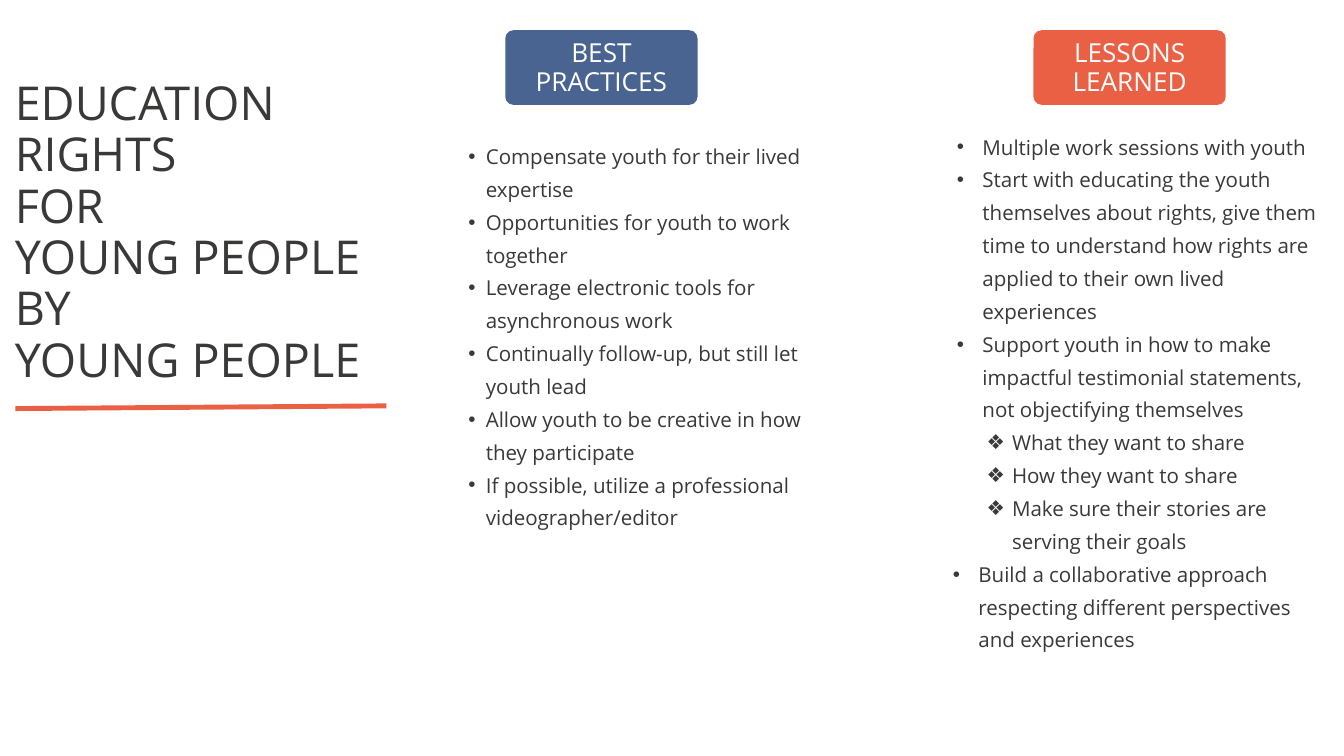
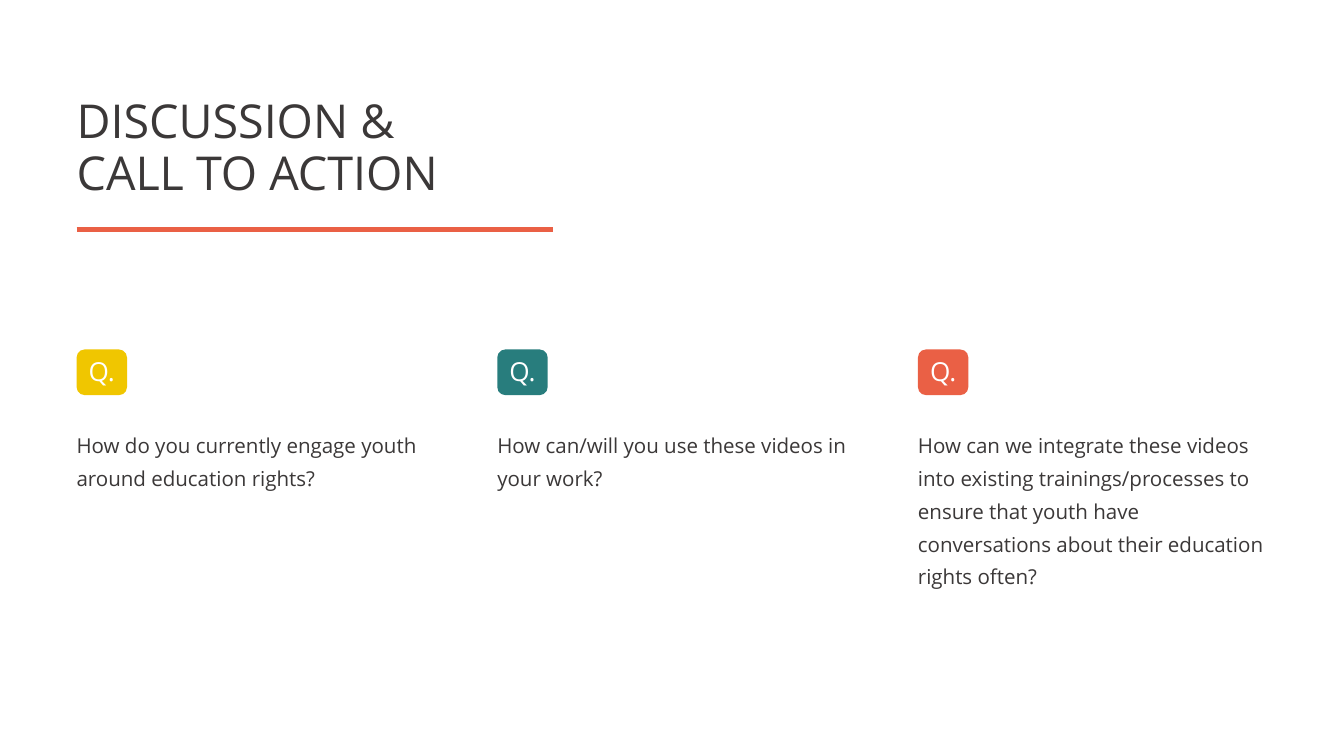
"""Build two slides on youth education rights: lessons and discussion."""
from lxml.etree import SubElement
from pptx import Presentation
from pptx.dml.color import RGBColor
from pptx.enum.shapes import MSO_CONNECTOR, MSO_SHAPE
from pptx.enum.text import MSO_ANCHOR, MSO_AUTO_SIZE, PP_ALIGN
from pptx.oxml.ns import qn
from pptx.util import Pt

PX = 9144
FONT = "Open Sans"
INK, WHITE = "3B3838", "FFFFFF"
BLUE, CORAL, GOLD, TEAL = "4A6491", "EA6045", "F0C600", "287D7D"
tint = RGBColor.from_string


def scale(*sizes):
    """Turn px lengths into EMU."""
    return [size * PX for size in sizes]


def write(shape, lines, size, lead, color=INK, align=PP_ALIGN.LEFT, anchor=MSO_ANCHOR.TOP):
    """Fill a shape with one paragraph per line."""
    frame = shape.text_frame
    frame.margin_left = frame.margin_top = frame.margin_right = frame.margin_bottom = 0
    frame.word_wrap = True
    frame.auto_size = MSO_AUTO_SIZE.NONE
    frame.vertical_anchor = anchor
    for i, line in enumerate(lines):
        para = frame.add_paragraph() if i else frame.paragraphs[0]
        para.alignment = align
        para.line_spacing = Pt(lead)
        run = para.add_run()
        run.text = line
        run.font.name = FONT
        run.font.size = Pt(size)
        run.font.color.rgb = tint(color)
    return frame.paragraphs


deck = Presentation()
deck.slide_width, deck.slide_height = scale(2000, 1125)

heads = [
    (["EDUCATION RIGHTS", "FOR", "YOUNG PEOPLE", "BY", "YOUNG PEOPLE"],
     (22, 117, 553, 459), (23, 608, 575, 604)),
    (["DISCUSSION &", "CALL TO ACTION"],
     (114, 144, 1282, 154), (114, 341, 823, 341)),
]
slides = []
for lines, box, ends in heads:
    slide = deck.slides.add_slide(deck.slide_layouts[5])
    slides.append(slide)
    title = slide.shapes.title
    title.left, title.top, title.width, title.height = scale(*box)
    write(title, lines, 50, 55)
    rule = slide.shapes.add_connector(MSO_CONNECTOR.STRAIGHT, *scale(*ends))
    rule.line.color.rgb = tint(CORAL)
    rule.line.width = Pt(5.25)
    SubElement(rule._element.spPr, qn("a:effectLst"))
lessons, talk = slides

DOT, GEM = ("•", 1), ("❖", 2)
lists = [
    ((671, 202, 571, 572), 26, [
        ("Compensate youth for their lived expertise", DOT, 52),
        ("Opportunities for youth to work together", DOT, 52),
        ("Leverage electronic tools for asynchronous work", DOT, 52),
        ("Continually follow-up, but still let youth lead", DOT, 52),
        ("Allow youth to be creative in how they participate", DOT, 52),
        ("If possible, utilize a professional videographer/editor", DOT, 52),
    ]),
    ((1399, 188, 571, 781), 38, [
        ("Multiple work sessions with youth", DOT, 63),
        ("Start with educating the youth themselves about rights, give them "
         "time to understand how rights are applied to their own lived experiences", DOT, 63),
        ("Support youth in how to make impactful testimonial statements, "
         "not objectifying themselves", DOT, 63),
        ("What they want to share", GEM, 107),
        ("How they want to share", GEM, 107),
        ("Make sure their stories are serving their goals", GEM, 107),
        ("Build a collaborative approach respecting different perspectives "
         "and experiences", DOT, 57),
    ]),
]
for box, hang, items in lists:
    body = lessons.shapes.add_textbox(*scale(*box))
    paras = write(body, [item[0] for item in items], 22, 35.2)
    for para, (text, (mark, level), left) in zip(paras, items):
        para.level = level
        props = para._p.get_or_add_pPr()
        props.set("marL", str(left * PX))
        props.set("indent", str(-hang * PX))
        SubElement(props, qn("a:buFont"), typeface="Arial")
        SubElement(props, qn("a:buChar"), char=mark)

badges = [
    (lessons, "BEST PRACTICES", BLUE, (752, 45, 286, 111)),
    (lessons, "LESSONS LEARNED", CORAL, (1538, 45, 286, 111)),
]
asks = [
    (GOLD, "How do you currently engage youth around education rights?", 93),
    (TEAL, "How can/will you use these videos in your work?", 93),
    (CORAL, "How can we integrate these videos into existing trainings/processes to "
            "ensure that youth have conversations about their education rights often?", 241),
]
for col, (color, ask, high) in enumerate(asks):
    left = 114 + 626 * col
    badges.append((talk, "Q.", color, (left, 520, 75, 68)))
    body = talk.shapes.add_textbox(*scale(left, 632, 521, high))
    write(body, [ask], 22, 35.2)

for slide, text, color, box in badges:
    badge = slide.shapes.add_shape(MSO_SHAPE.ROUNDED_RECTANGLE, *scale(*box))
    badge.adjustments[0] = 12 / box[3]
    badge.shadow.inherit = False
    badge.fill.solid()
    badge.fill.fore_color.rgb = tint(color)
    badge.line.fill.background()
    write(badge, [text], 28, 30.8, WHITE, PP_ALIGN.CENTER, MSO_ANCHOR.MIDDLE)

deck.save("out.pptx")
